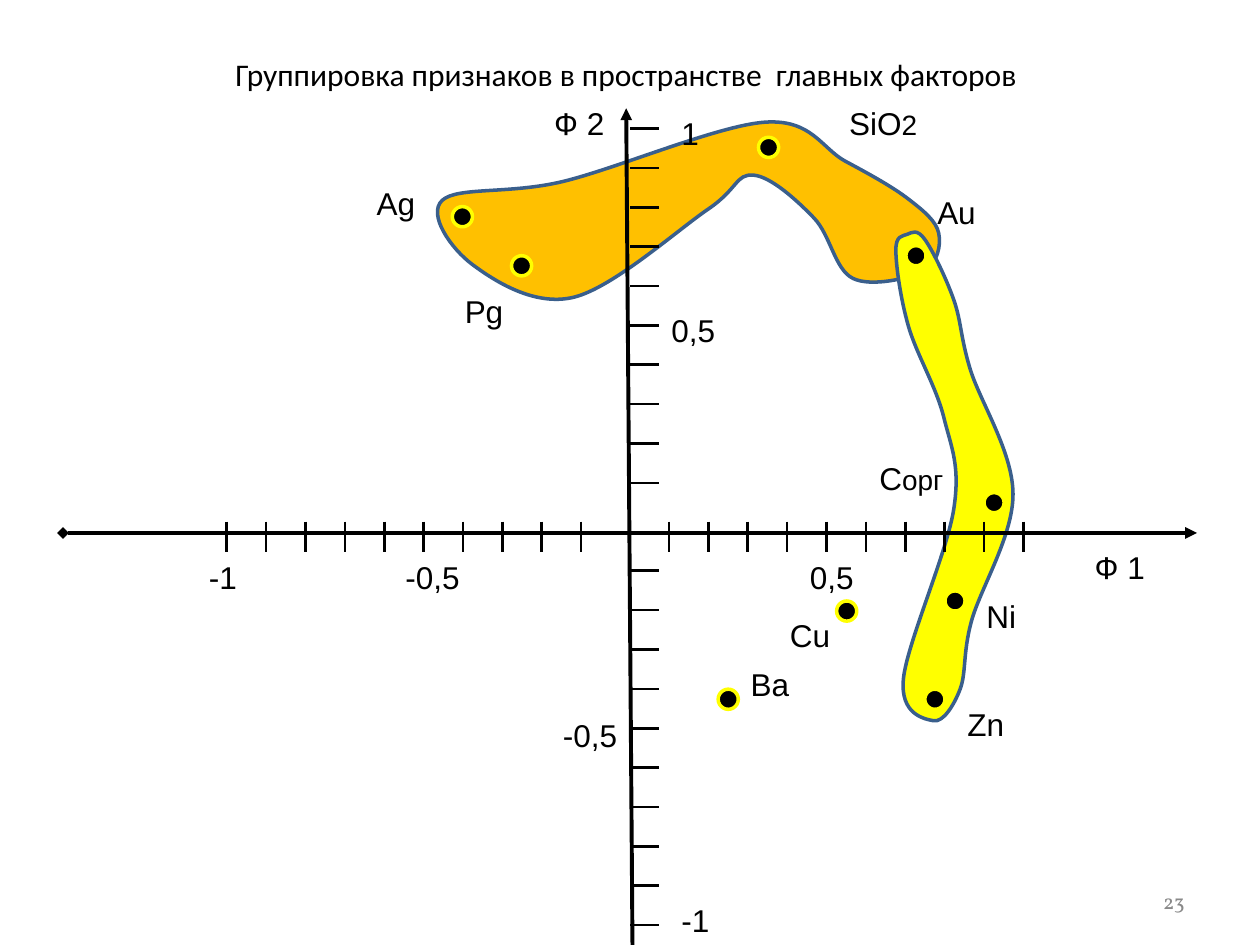
"""Build a slide that groups variables in the space of two principal factors."""
import pptx
import pptx.dml.color
import pptx.enum.shapes
import pptx.enum.text
import pptx.oxml
import pptx.oxml.ns
import pptx.util

PX = 9144
ALIGN = pptx.enum.text.PP_ALIGN
ANCHOR = pptx.enum.text.MSO_ANCHOR

SILVER_GROUP = [(677, 221), (733, 215), (745, 185), (721, 158), (671, 128), (607, 97), (447, 144),
                (351, 159), (375, 210), (455, 236), (562, 166), (598, 139), (646, 173)]
METAL_GROUP = [(711, 199), (720, 186), (734, 190), (757, 238), (770, 293), (804, 392), (771, 493),
               (762, 547), (741, 572), (717, 539), (757, 404), (749, 331), (721, 259)]
TICK_COUNT, TICK_STEP = 10, 31.25
AXIS_LABELS = [(859, 430, 60, "Ф 1"), (430, 78, 60, "Ф 2"), (523, 242, 55, "0,5"),
               (531, 86, 34, "1"), (633, 438, 55, "0,5"), (156, 438, 43, "-1"),
               (437, 563, 64, "-0,5"), (312, 438, 64, "-0,5"), (531, 710, 43, "-1")]
VARIABLE_LABELS = [(617, 484, 52, "Cu"), (758, 555, 50, "Zn"), (359, 227, 51, "Pg"),
                   (289, 141, 51, "Ag"), (586, 523, 51, "Ba"), (773, 469, 44, "Ni"),
                   (688, 359, 72, "C", "орг"), (664, 78, 75, "SiO", "2"), (734, 148, 51, "Au")]
DOTS = [(719, 195), (602, 109), (781, 391), (750, 469), (570, 547),
        (359, 164), (406, 203), (734, 547), (664, 477)]


def px(value):
    """Turn px into EMU."""
    return pptx.util.Emu(round(value * PX))


def color(value):
    """Turn a hex string into a colour."""
    return pptx.dml.color.RGBColor.from_string(value)


def smooth_points(anchors):
    """Return two control points and an end for each segment of a closed smooth curve."""
    points = []
    for i, start in enumerate(anchors):
        before, end, after = (anchors[(i + k) % len(anchors)] for k in (-1, 1, 2))
        points.append([s + (e - b) / 6 for b, s, e in zip(before, start, end)])
        points.append([e - (a - s) / 6 for s, e, a in zip(start, end, after)])
        points.append(end)
    return points


class Plot:
    """Hold the style and the current slide, and draw each kind of element."""

    ink, outline, halo = "000000", "3A5F8C", "FFFF00"
    font, size, small_size = "Arial", 18, 16

    def __init__(self, page):
        """Start drawing on a page."""
        self.shapes = page.shapes

    def paint(self, shape, fill, line):
        """Give a shape its fill and its line."""
        shape.shadow.inherit = False
        shape.fill.solid()
        shape.fill.fore_color.rgb = color(fill)
        shape.line.color.rgb = color(line)
        shape.line.width = pptx.util.Pt(2)

    def region(self, anchors, fill):
        """Draw a closed smooth outline through the anchors."""
        points = [(px(x), px(y)) for x, y in smooth_points(anchors)]
        builder = self.shapes.build_freeform(*points[-1], scale=1.0)
        builder.add_line_segments(points, close=True)
        shape = builder.convert_to_shape()
        segments = list(shape.element.iter(pptx.oxml.ns.qn("a:lnTo")))
        for i in range(0, len(points), 3):
            curve = pptx.oxml.parse_xml(f"<a:cubicBezTo {pptx.oxml.ns.nsdecls('a')}/>")
            segments[i].addprevious(curve)
            for segment in segments[i:i + 3]:
                curve.append(segment[0])
                segment.getparent().remove(segment)
        self.paint(shape, fill, self.outline)

    def line(self, group, start, end, width=1.5, **ends):
        """Draw a straight line with optional headEnd and tailEnd marks."""
        straight = pptx.enum.shapes.MSO_CONNECTOR.STRAIGHT
        line = group.shapes.add_connector(straight, *map(px, start + end))
        line.line.color.rgb = color(self.ink)
        line.line.width = pptx.util.Pt(width)
        for tag, mark in ends.items():
            pptx.oxml.ns.qn(f"a:{tag}")
            line.line._get_or_add_ln().append(pptx.oxml.parse_xml(
                f'<a:{tag} {pptx.oxml.ns.nsdecls("a")} type="{mark}"/>'))
        line.element.spPr.append(pptx.oxml.parse_xml(
            f"<a:effectLst {pptx.oxml.ns.nsdecls('a')}/>"))

    def label(self, shapes, left, top, width, text, small=""):
        """Write a short label, with an optional smaller ending."""
        box = shapes.add_textbox(px(left), px(top), px(width), px(40))
        box.text_frame.word_wrap = False
        box.text_frame.auto_size = pptx.enum.text.MSO_AUTO_SIZE.SHAPE_TO_FIT_TEXT
        para = box.text_frame.paragraphs[0]
        para.text = text
        if small:
            para.add_run().text = small
        for span, size in zip(para.runs, (self.size, self.small_size)):
            self.style(span, self.font, size, self.ink)

    def caption(self, place, text, font, size, ink, align):
        """Write a line of text centred vertically in a wrapping box."""
        box = self.shapes.add_textbox(*map(px, place))
        box.text_frame.word_wrap = True
        box.text_frame.vertical_anchor = ANCHOR.MIDDLE
        box.text_frame.text = text
        para = box.text_frame.paragraphs[0]
        para.alignment = align
        self.style(para.runs[0], font, size, ink)

    def style(self, span, font, size, ink):
        """Set the font of a run."""
        span.font.name = font
        span.font.size = pptx.util.Pt(size)
        span.font.color.rgb = color(ink)

    def axes(self):
        """Draw both axes with their ticks and labels as one group."""
        group = self.shapes.add_group_shape()
        self.line(group, (497, 86), (502, 750), 2.25, headEnd="triangle")
        self.line(group, (50, 423), (950, 423), 2.25, headEnd="diamond", tailEnd="triangle")
        for first_x, first_y in ((180, 102), (531, 453)):
            for i in range(TICK_COUNT):
                x, y = first_x + i * TICK_STEP, first_y + i * TICK_STEP
                self.line(group, (x, 414), (x, 438))
                self.line(group, (500, y), (523, y))
        for label in AXIS_LABELS:
            self.label(group.shapes, *label)

    def dot(self, left, top):
        """Mark a variable with a ringed dot."""
        oval = pptx.enum.shapes.MSO_SHAPE.OVAL
        shape = self.shapes.add_shape(oval, px(left), px(top), px(16), px(16))
        self.paint(shape, self.ink, self.halo)


def main():
    """Build and save the deck."""
    deck = pptx.Presentation()
    deck.slide_width, deck.slide_height = px(1000), px(750)
    plot = Plot(deck.slides.add_slide(deck.slide_layouts[6]))
    plot.region(SILVER_GROUP, "FFC000")
    plot.region(METAL_GROUP, "FFFF00")
    plot.caption((47, 31, 900, 55), "Группировка признаков в пространстве  главных факторов",
                 "Calibri", 18, "000000", ALIGN.CENTER)
    plot.caption((717, 695, 233, 40), "23", "Vollkorn", 12, "898989", ALIGN.RIGHT)
    plot.axes()
    for label in VARIABLE_LABELS:
        plot.label(plot.shapes, *label)
    for dot in DOTS:
        plot.dot(*dot)
    deck.save("out.pptx")


if __name__ == "__main__":
    main()
